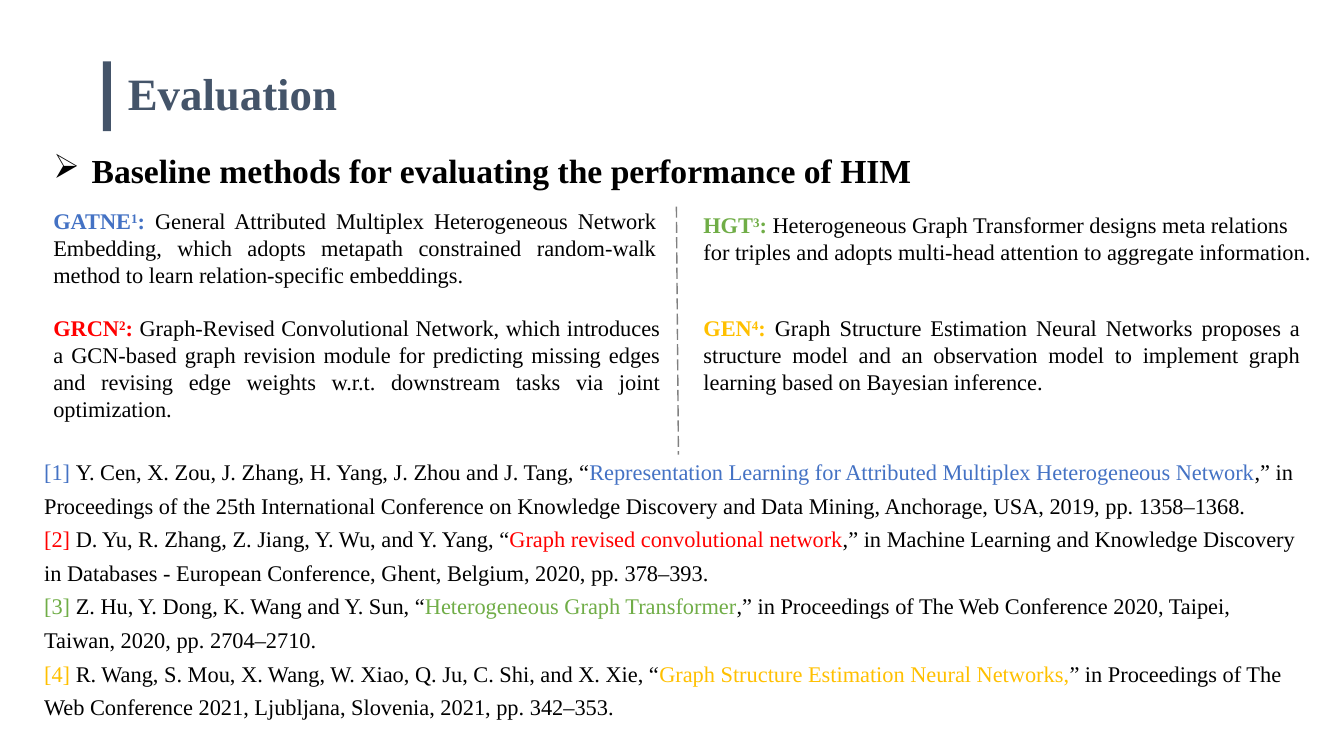
from lxml import etree
from pptx import Presentation
from pptx.dml.color import RGBColor
from pptx.enum.dml import MSO_LINE
from pptx.enum.shapes import MSO_CONNECTOR, MSO_SHAPE
from pptx.enum.text import PP_ALIGN
from pptx.oxml.ns import qn
from pptx.util import Inches, Pt

LEFT, EVEN = PP_ALIGN.LEFT, PP_ALIGN.JUSTIFY
RECT, LINE, DASH = MSO_SHAPE.RECTANGLE, MSO_CONNECTOR.STRAIGHT, MSO_LINE.LONG_DASH
BLACK = RGBColor(0, 0, 0)
SLATE = RGBColor(0x44, 0x54, 0x69)
GRAY = RGBColor(0x80, 0x80, 0x80)
BLUE = RGBColor(0x44, 0x72, 0xC4)
RED = RGBColor(0xFF, 0, 0)
GREEN = RGBColor(0x70, 0xAD, 0x47)
GOLD = RGBColor(0xFF, 0xC0, 0)
FONT = "Times New Roman"

deck = Presentation()
deck.slide_width, deck.slide_height = Inches(13.33), Inches(7.5)
COL, ROW = deck.slide_width / 100, deck.slide_height / 100
slide = deck.slides.add_slide(deck.slide_layouts[6])
shapes = slide.shapes


def add_box(x, y, w, h):
    box = shapes.add_textbox(int(x * COL), int(y * ROW), int(w * COL), int(h * ROW))
    box.text_frame.word_wrap = True
    return box.text_frame


def add_run(para, text, size, color, bold=False):
    run = para.add_run()
    run.text = text
    run.font.name, run.font.size, run.font.bold = FONT, Pt(size), bold
    run.font.color.rgb = color
    return run


para = add_box(8.78, 9.47, 37, 7.07).paragraphs[0]
para.line_spacing = 0.8
add_run(para, "Evaluation", 32, SLATE, True)

bar = shapes.add_shape(RECT, int(7.65 * COL), int(8.13 * ROW), int(0.6 * COL), int(9.2 * ROW))
bar.shadow.inherit = False
bar.fill.solid()
bar.fill.fore_color.rgb = SLATE
bar.line.fill.background()

para = add_box(3.23, 16.53, 93, 15.47).paragraphs[0]
para.alignment, para.line_spacing = EVEN, 1.5
props = para._p.get_or_add_pPr()
props.set("marL", str(Inches(0.38)))
props.set("indent", str(-Inches(0.38)))
etree.SubElement(props, qn("a:buChar")).set("char", "➢")
add_run(para, "Baseline methods for evaluating the performance of HIM", 24, BLACK, True)

rule = shapes.add_connector(LINE, int(50.33 * COL), int(27.33 * ROW), int(50.48 * COL), int(60.13 * ROW))
rule.line.color.rgb, rule.line.width, rule.line.dash_style = GRAY, Pt(1), DASH
etree.SubElement(rule._element.spPr, qn("a:effectLst"))

NEAR, FAR = 3.23, 51.6
methods = [
    (NEAR, 26.8, 46.35, 12.13, EVEN, BLUE, "GATNE",
     "General Attributed Multiplex Heterogeneous Network Embedding, which adopts metapath "
     "constrained random-walk method to learn relation-specific embeddings."),
    (NEAR, 40.93, 46.65, 15.73, EVEN, RED, "GRCN",
     "Graph-Revised Convolutional Network, which introduces a GCN-based graph revision module "
     "for predicting missing edges and revising edge weights w.r.t. downstream tasks via joint optimization."),
    (FAR, 27.33, 46.8, 8.53, LEFT, GREEN, "HGT",
     "Heterogeneous Graph Transformer designs meta relations for triples and adopts "
     "multi-head attention to aggregate information."),
    (FAR, 40.93, 45.9, 12.13, EVEN, GOLD, "GEN",
     "Graph Structure Estimation Neural Networks proposes a structure model and an observation "
     "model to implement graph learning based on Bayesian inference."),
]
for num, (x, y, w, h, align, color, name, text) in enumerate(methods, 1):
    para = add_box(x, y, w, h).paragraphs[0]
    para.alignment = align
    add_run(para, name, 16, color, True)
    mark = add_run(para, str(num), 16, color, True)
    mark._r.get_or_add_rPr().set("baseline", "30000")
    add_run(para, ": ", 16, color, True)
    add_run(para, text, 16, BLACK)

papers = [
    (BLUE, "Y. Cen, X. Zou, J. Zhang, H. Yang, J. Zhou and J. Tang, “",
     "Representation Learning for Attributed Multiplex Heterogeneous Network",
     ",” in Proceedings of the 25th International Conference on Knowledge Discovery and Data Mining, "
     "Anchorage, USA, 2019, pp. 1358–1368."),
    (RED, "D. Yu, R. Zhang, Z. Jiang, Y. Wu, and Y. Yang, “",
     "Graph revised convolutional network",
     ",” in Machine Learning and Knowledge Discovery in Databases - European Conference, "
     "Ghent, Belgium, 2020, pp. 378–393."),
    (GREEN, "Z. Hu, Y. Dong, K. Wang and Y. Sun, “",
     "Heterogeneous Graph Transformer",
     ",” in Proceedings of The Web Conference 2020, Taipei, Taiwan, 2020, pp. 2704–2710."),
    (GOLD, "R. Wang, S. Mou, X. Wang, W. Xiao, Q. Ju, C. Shi, and X. Xie, “",
     "Graph Structure Estimation Neural Networks,",
     "” in Proceedings of The Web Conference 2021, Ljubljana, Slovenia, 2021, pp. 342–353."),
]
frame = add_box(2.55, 59.07, 94.95, 37.2)
for num, (color, names, title, venue) in enumerate(papers, 1):
    para = frame.paragraphs[0] if num == 1 else frame.add_paragraph()
    para.line_spacing = 1.25
    add_run(para, f"[{num}] ", 16, color)
    add_run(para, names, 16, BLACK)
    add_run(para, title, 16, color)
    add_run(para, venue, 16, BLACK)

deck.save("out.pptx")
